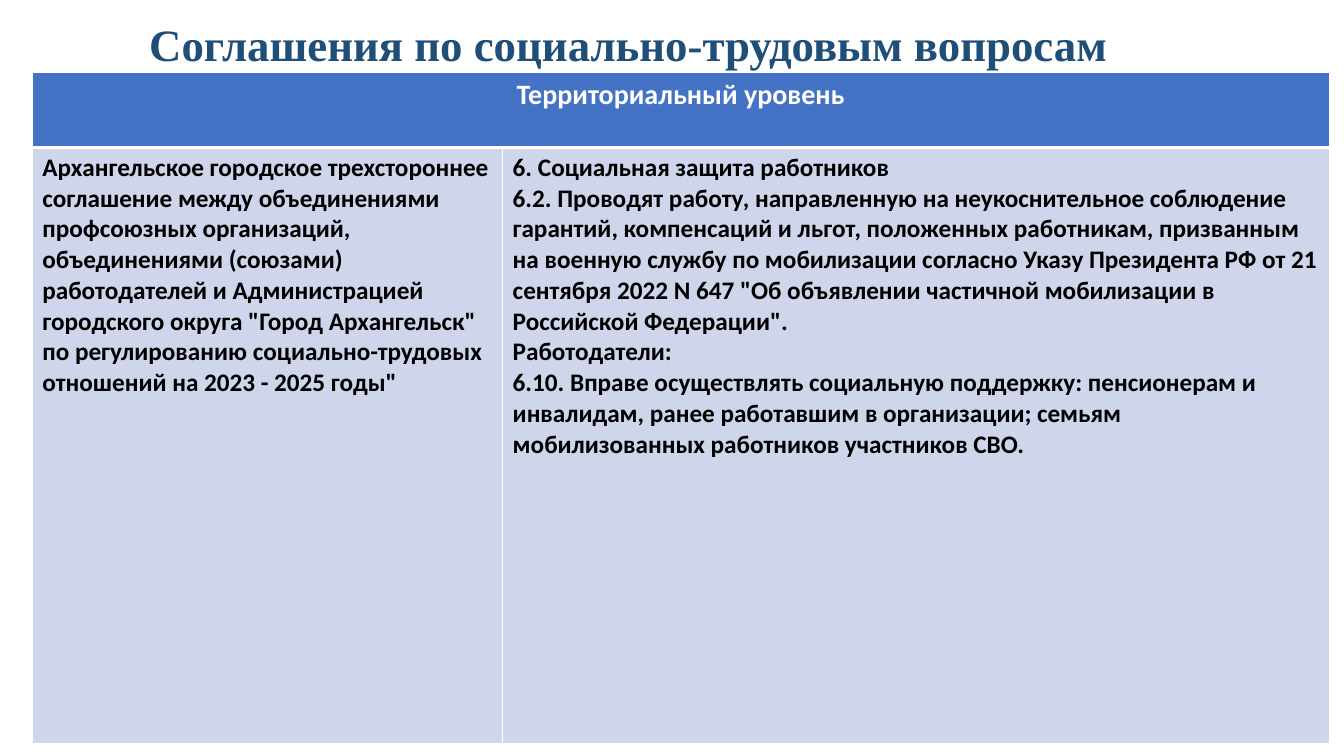
import pptx
import pptx.util
import pptx.dml.color
import pptx.enum.text
import pptx.oxml

RGBColor = pptx.dml.color.RGBColor
Align = pptx.enum.text.PP_ALIGN
Anchor = pptx.enum.text.MSO_ANCHOR

NAVY = RGBColor(0x1F, 0x4E, 0x79)
BLUE = RGBColor(0x44, 0x72, 0xC4)
PALE = RGBColor(0xCF, 0xD5, 0xEA)
WHITE = RGBColor(0xFF, 0xFF, 0xFF)
BLACK = RGBColor(0x00, 0x00, 0x00)

TITLE = "Соглашения по социально-трудовым вопросам"
LEVEL = "Территориальный уровень"
PACT = (
    "Архангельское городское трехстороннее соглашение между объединениями "
    "профсоюзных организаций, объединениями (союзами) работодателей и "
    'Администрацией городского округа "Город Архангельск" по регулированию '
    'социально-трудовых отношений на 2023 - 2025 годы"'
)
TERMS = [
    "6. Социальная защита работников",
    "6.2. Проводят работу, направленную на неукоснительное соблюдение "
    "гарантий, компенсаций и льгот, положенных работникам, призванным на "
    "военную службу по мобилизации согласно Указу Президента РФ от 21 "
    'сентября 2022 N 647 "Об объявлении частичной мобилизации в Российской '
    'Федерации".',
    "Работодатели:",
    "6.10. Вправе осуществлять социальную поддержку: пенсионерам и "
    "инвалидам, ранее работавшим в организации; семьям мобилизованных "
    "работников участников СВО.",
]


def write(frame, lines, size=18, font="Calibri", color=BLACK, align=Align.LEFT):
    frame.word_wrap = True
    for i, line in enumerate(lines):
        para = frame.paragraphs[0] if i == 0 else frame.add_paragraph()
        para.alignment = align
        run = para.add_run()
        run.text = line
        run.font.size = pptx.util.Pt(size)
        run.font.name = font
        run.font.bold = True
        run.font.color.rgb = color


class Deck:
    def __init__(self):
        self.show = pptx.Presentation()
        self.show.slide_width = pptx.util.Inches(13.33)
        self.show.slide_height = pptx.util.Inches(7.5)
        self.slide = self.show.slides.add_slide(self.show.slide_layouts[5])

    def wide(self, share):
        return round(self.show.slide_width * share / 100)

    def high(self, share):
        return round(self.show.slide_height * share / 100)

    def title(self, text, left, top, width, height):
        shape = self.slide.shapes.title
        shape.left, shape.top = self.wide(left), self.high(top)
        shape.width, shape.height = self.wide(width), self.high(height)
        frame = shape.text_frame
        frame.auto_size = pptx.enum.text.MSO_AUTO_SIZE.NONE
        frame.vertical_anchor = Anchor.TOP
        write(frame, [text], size=32, font="Times New Roman", color=NAVY)

    def table(self, left, top, cols, rows):
        table = self.slide.shapes.add_table(
            len(rows), len(cols), self.wide(left), self.high(top),
            self.wide(sum(cols)), self.high(sum(rows)),
        ).table
        table.horz_banding = False
        for col, share in zip(table.columns, cols):
            col.width = self.wide(share)
        for row, share in zip(table.rows, rows):
            row.height = self.high(share)
        return table

    def cell(self, cell, fill, base=1):
        props = cell._tc.get_or_add_tcPr()
        for side, width in (("L", 1), ("R", 1), ("T", 1), ("B", base)):
            props.append(pptx.oxml.parse_xml(
                f'<a:ln{side} xmlns:a="http://schemas.openxmlformats.org/drawingml/2006/main" '
                f'w="{pptx.util.Pt(width)}"><a:solidFill><a:srgbClr val="{WHITE}"/>'
                f'</a:solidFill></a:ln{side}>'
            ))
        cell.fill.solid()
        cell.fill.fore_color.rgb = fill
        cell.vertical_anchor = Anchor.TOP


def main():
    deck = Deck()
    deck.title(TITLE, 10.35, 1.6, 83.7, 8.5)
    table = deck.table(2.4, 9.6, cols=(35, 61.5), rows=(9.9, 78.9))
    for col in range(2):
        deck.cell(table.cell(0, col), BLUE, base=3)
        deck.cell(table.cell(1, col), PALE)
    head = table.cell(0, 0)
    head.merge(table.cell(0, 1))
    write(head.text_frame, [LEVEL], size=20, color=WHITE, align=Align.CENTER)
    write(table.cell(1, 0).text_frame, [PACT])
    write(table.cell(1, 1).text_frame, TERMS)
    deck.show.save("out.pptx")


if __name__ == "__main__":
    main()
